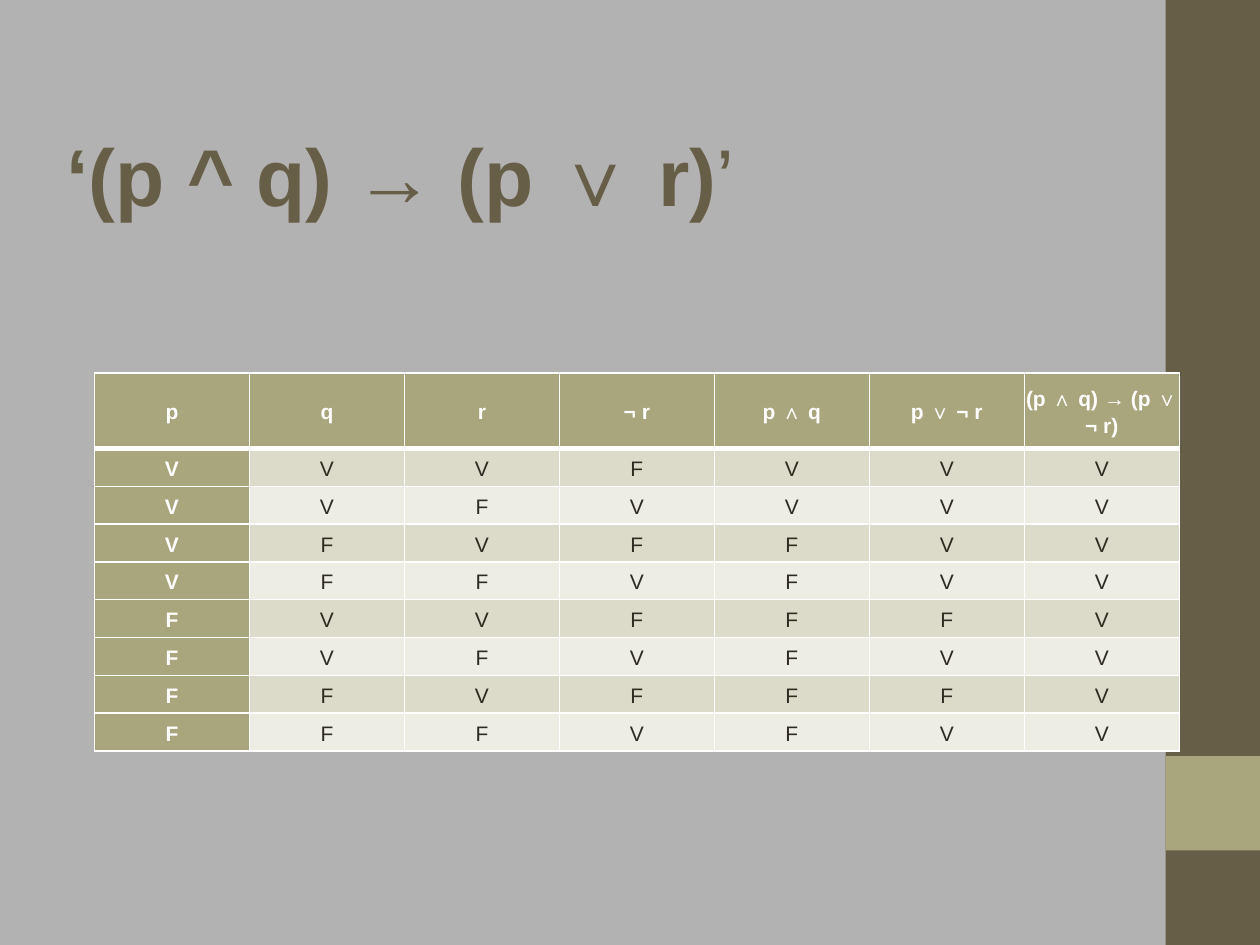
from dataclasses import dataclass
from itertools import product

from lxml import etree
from pptx import Presentation
from pptx.dml.color import RGBColor
from pptx.enum.shapes import MSO_SHAPE
from pptx.enum.text import MSO_ANCHOR, PP_ALIGN
from pptx.oxml.ns import qn
from pptx.slide import Slide
from pptx.table import _Cell
from pptx.text.text import Font
from pptx.util import Inches, Pt

RECTANGLE = MSO_SHAPE.RECTANGLE
MIDDLE = MSO_ANCHOR.MIDDLE
CENTER = PP_ALIGN.CENTER

COLORS = {
    "background": "B2B2B2",
    "brown": "675E47",
    "olive": "A9A57C",
    "odd_row": "DCDBCA",
    "even_row": "EDEDE4",
    "ink": "2F2B20",
    "white": "FFFFFF",
}
FONT_NAME = "Arial"
HEADINGS = ["p", "q", "r", "¬ r", "p ∧ q", "p ∨ ¬ r", "(p ∧ q) → (p ∨ ¬ r)"]
COLUMN_WIDTH = 1.23
HEADER_HEIGHT = 0.6
ROW_HEIGHT = 0.3
THIN_LINE = 1
HEADER_LINE = 3


@dataclass(frozen=True)
class Band:
    left: float
    top: float
    width: float
    height: float
    color: str


@dataclass(frozen=True)
class CellStyle:
    fill: str
    ink: str
    bold: bool
    top_line: int = THIN_LINE
    bottom_line: int = THIN_LINE


SIDE_BANDS = [
    Band(9.25, 0, 0.75, 7.5, "brown"),
    Band(9.25, 6, 0.75, 0.75, "olive"),
]


def rgb(name: str) -> RGBColor:
    return RGBColor.from_string(COLORS[name])


def set_font(font: Font, size: int, color: str, bold: bool) -> None:
    font.name = FONT_NAME
    font.size = Pt(size)
    font.bold = bold
    font.color.rgb = rgb(color)


def add_band(slide: Slide, band: Band) -> None:
    shape = slide.shapes.add_shape(
        RECTANGLE, Inches(band.left), Inches(band.top), Inches(band.width), Inches(band.height)
    )
    shape.shadow.inherit = False
    shape.fill.solid()
    shape.fill.fore_color.rgb = rgb(band.color)
    shape.line.fill.background()


def add_title(slide: Slide) -> None:
    box = slide.shapes.add_textbox(Inches(0.43), Inches(0.76), Inches(9), Inches(1.25))
    frame = box.text_frame
    frame.word_wrap = True
    frame.vertical_anchor = MIDDLE
    para = frame.paragraphs[0]
    set_font(para.font, 46, "brown", True)
    para.add_run().text = "‘(p ^ q) → (p ∨ r)"
    closing_quote = para.add_run()
    closing_quote.text = "’"
    closing_quote.font.bold = False


def set_borders(cell: _Cell, style: CellStyle) -> None:
    properties = cell._tc.get_or_add_tcPr()
    widths = {"L": THIN_LINE, "R": THIN_LINE, "T": style.top_line, "B": style.bottom_line}
    for side, width in widths.items():
        line = etree.SubElement(properties, qn(f"a:ln{side}"), w=str(Pt(width)))
        fill = etree.SubElement(line, qn("a:solidFill"))
        etree.SubElement(fill, qn("a:srgbClr"), val=COLORS["white"])


def style_for(row: int, column: int) -> CellStyle:
    if row == 0:
        return CellStyle("olive", "white", True, bottom_line=HEADER_LINE)
    top_line = HEADER_LINE if row == 1 else THIN_LINE
    if column == 0:
        return CellStyle("olive", "white", True, top_line)
    return CellStyle("odd_row" if row % 2 else "even_row", "ink", False, top_line)


def fill_cell(cell: _Cell, text: str, style: CellStyle) -> None:
    cell.margin_left = cell.margin_right = Inches(0.01)
    cell.margin_top = cell.margin_bottom = Inches(0.01)
    cell.vertical_anchor = MIDDLE
    set_borders(cell, style)
    cell.fill.solid()
    cell.fill.fore_color.rgb = rgb(style.fill)
    para = cell.text_frame.paragraphs[0]
    para.text = text
    para.alignment = CENTER
    para.line_spacing = 1.15
    set_font(para.font, 12, style.ink, style.bold)


def truth_rows() -> list[list[str]]:
    rows = []
    for p, q, r in product([True, False], repeat=3):
        both = p and q
        either = p or not r
        values = [p, q, r, not r, both, either, not both or either]
        rows.append(["V" if value else "F" for value in values])
    return rows


def add_truth_table(slide: Slide) -> None:
    rows = [HEADINGS] + truth_rows()
    heights = [HEADER_HEIGHT] + [ROW_HEIGHT] * (len(rows) - 1)
    table = slide.shapes.add_table(
        len(rows), len(HEADINGS), Inches(0.75), Inches(2.96),
        Inches(COLUMN_WIDTH * len(HEADINGS)), Inches(sum(heights)),
    ).table
    for column in table.columns:
        column.width = Inches(COLUMN_WIDTH)
    for row_index, (texts, height) in enumerate(zip(rows, heights)):
        table.rows[row_index].height = Inches(height)
        for column_index, text in enumerate(texts):
            fill_cell(table.cell(row_index, column_index), text, style_for(row_index, column_index))


def main() -> None:
    deck = Presentation()
    deck.slide_width = Inches(10)
    deck.slide_height = Inches(7.5)
    page = deck.slides.add_slide(deck.slide_layouts[6])
    page.background.fill.solid()
    page.background.fill.fore_color.rgb = rgb("background")
    for band in SIDE_BANDS:
        add_band(page, band)
    add_title(page)
    add_truth_table(page)
    deck.save("out.pptx")


if __name__ == "__main__":
    main()
